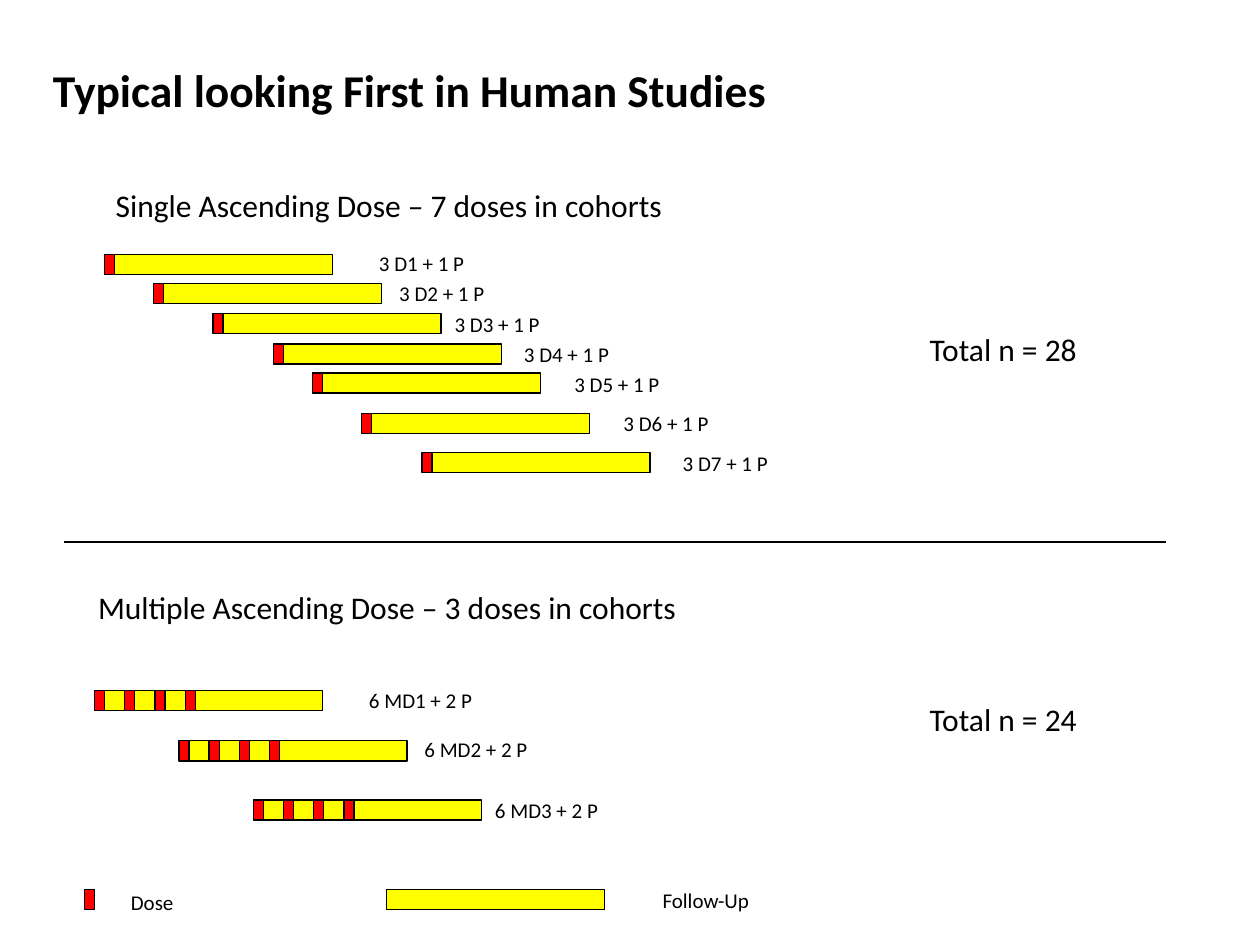
from dataclasses import dataclass

from lxml.etree import SubElement
from pptx import Presentation
from pptx.dml.color import RGBColor as Rgb
from pptx.enum.shapes import MSO_CONNECTOR as Conn, MSO_SHAPE as Shape
from pptx.enum.text import MSO_ANCHOR as Anchor, MSO_AUTO_SIZE as Auto, PP_ALIGN as Align
from pptx.oxml.ns import qn
from pptx.slide import Slide
from pptx.text.text import TextFrame
from pptx.util import Inches, Pt


@dataclass(frozen=True)
class Theme:
    """Colours, type sizes and line widths."""
    font: str = "Calibri"
    ink: Rgb = Rgb(0, 0, 0)
    dose: Rgb = Rgb(255, 0, 0)
    follow: Rgb = Rgb(255, 255, 0)
    title: int = 26
    head: int = 18
    label: int = 12
    edge: float = 0.75
    rule: float = 1


@dataclass(frozen=True)
class Cohort:
    """One dosing bar and the place of its label."""
    left: float
    top: float
    tag: str
    tag_x: float
    tag_y: float
    doses: int = 1


@dataclass(frozen=True)
class Label:
    """A text box with one line of text."""
    text: str
    left: float
    top: float
    width: float
    height: float = 0.4
    size: int = 18
    wrap: bool = False
    tail: str = ""


THEME = Theme()
DOSE_W, FOLLOW_W, BAR_H, STEP = 0.08, 1.73, 0.16, 0.24

SINGLE = [
    Cohort(0.83, 2.02, "3 D1 + 1 P", 2.91, 1.94),
    Cohort(1.22, 2.25, "3 D2 + 1 P", 3.07, 2.18),
    Cohort(1.69, 2.49, "3 D3 + 1 P", 3.51, 2.42),
    Cohort(2.17, 2.73, "3 D4 + 1 P", 4.06, 2.66),
    Cohort(2.48, 2.96, "3 D5 + 1 P", 4.46, 2.9),
    Cohort(2.87, 3.28, "3 D6 + 1 P", 4.85, 3.21),
    Cohort(3.35, 3.59, "3 D7 + 1 P", 5.32, 3.53),
]
MULTI = [
    Cohort(0.75, 5.48, "6 MD1 + 2 P", 2.83, 5.41, 4),
    Cohort(1.42, 5.88, "6 MD2 + 2 P", 3.27, 5.8, 4),
    Cohort(2.01, 6.35, "6 MD3 + 2 P", 3.83, 6.28, 4),
]
LABELS = [
    Label("Single Ascending Dose – 7 doses in cohorts", 0.82, 1.43, 4.85),
    Label("Total n = 28", 7.28, 2.57, 1.89, wrap=True),
    Label("Multiple Ascending Dose – 3 doses in cohorts", 0.68, 4.62, 5.07),
    Label("Total n = 24", 7.28, 5.51, 1.89, wrap=True),
    Label("Dose", 0.94, 6.93, 0.63, size=THEME.label, tail=" "),
    Label("Follow-Up", 5.16, 6.91, 0.99, size=THEME.label, tail=" "),
]


def add_run(frame: TextFrame, text: str, size: int, bold: bool = False) -> None:
    """Add a styled run to the first paragraph."""
    run = frame.paragraphs[0].add_run()
    run.text = text
    font = run.font
    font.name, font.size, font.bold = THEME.font, Pt(size), bold
    font.color.rgb = THEME.ink


def add_title(slide: Slide, text: str) -> None:
    """Place and fill the title placeholder."""
    title = slide.shapes.title
    title.left, title.top = Inches(0.42), Inches(0.49)
    title.width, title.height = Inches(8.06), Inches(1.43)
    frame = title.text_frame
    frame.margin_left = frame.margin_right = 0
    frame.margin_top = frame.margin_bottom = 0
    frame.vertical_anchor, frame.auto_size = Anchor.TOP, Auto.NONE
    frame.paragraphs[0].alignment = Align.LEFT
    add_run(frame, text, THEME.title, True)


def add_label(slide: Slide, item: Label) -> None:
    """Draw a label."""
    box = slide.shapes.add_textbox(
        Inches(item.left), Inches(item.top), Inches(item.width), Inches(item.height))
    frame = box.text_frame
    frame.word_wrap, frame.auto_size = item.wrap, Auto.SHAPE_TO_FIT_TEXT
    add_run(frame, item.text, item.size)
    if item.tail:
        add_run(frame, item.tail, THEME.head)


def add_block(slide: Slide, left: float, top: float, width: float, fill: Rgb) -> None:
    """Draw one outlined block of a bar."""
    block = slide.shapes.add_shape(
        Shape.RECTANGLE, Inches(left), Inches(top), Inches(width), Inches(BAR_H))
    block.shadow.inherit = False
    block.fill.solid()
    block.fill.fore_color.rgb = fill
    block.line.color.rgb = THEME.ink
    block.line.width = Pt(THEME.edge)


def add_cohort(slide: Slide, item: Cohort) -> None:
    """Draw the follow-up block, its doses and the label."""
    add_block(slide, item.left + DOSE_W, item.top, FOLLOW_W, THEME.follow)
    for i in range(item.doses):
        add_block(slide, item.left + i * STEP, item.top, DOSE_W, THEME.dose)
    width = 0.97 if item.doses == 1 else 1.11
    add_label(slide, Label(item.tag, item.tag_x, item.tag_y, width, 0.3, THEME.label))


def add_rule(slide: Slide, left: float, right: float, top: float) -> None:
    """Draw the line between the two studies."""
    rule = slide.shapes.add_connector(
        Conn.STRAIGHT, Inches(left), Inches(top), Inches(right), Inches(top))
    rule.line.color.rgb = THEME.ink
    rule.line.width = Pt(THEME.rule)
    SubElement(rule._element.spPr, qn("a:effectLst"))


def main() -> None:
    """Build and save the slide."""
    deck = Presentation()
    deck.slide_width, deck.slide_height = Inches(10), Inches(7.5)
    slide = deck.slides.add_slide(deck.slide_layouts[5])
    add_title(slide, "Typical looking First in Human Studies")
    for item in SINGLE + MULTI:
        add_cohort(slide, item)
    add_rule(slide, 0.51, 9.25, 4.3)
    add_block(slide, 0.67, 7.06, DOSE_W, THEME.dose)
    add_block(slide, 3.07, 7.06, FOLLOW_W, THEME.follow)
    for item in LABELS:
        add_label(slide, item)
    deck.save("out.pptx")


if __name__ == "__main__":
    main()
